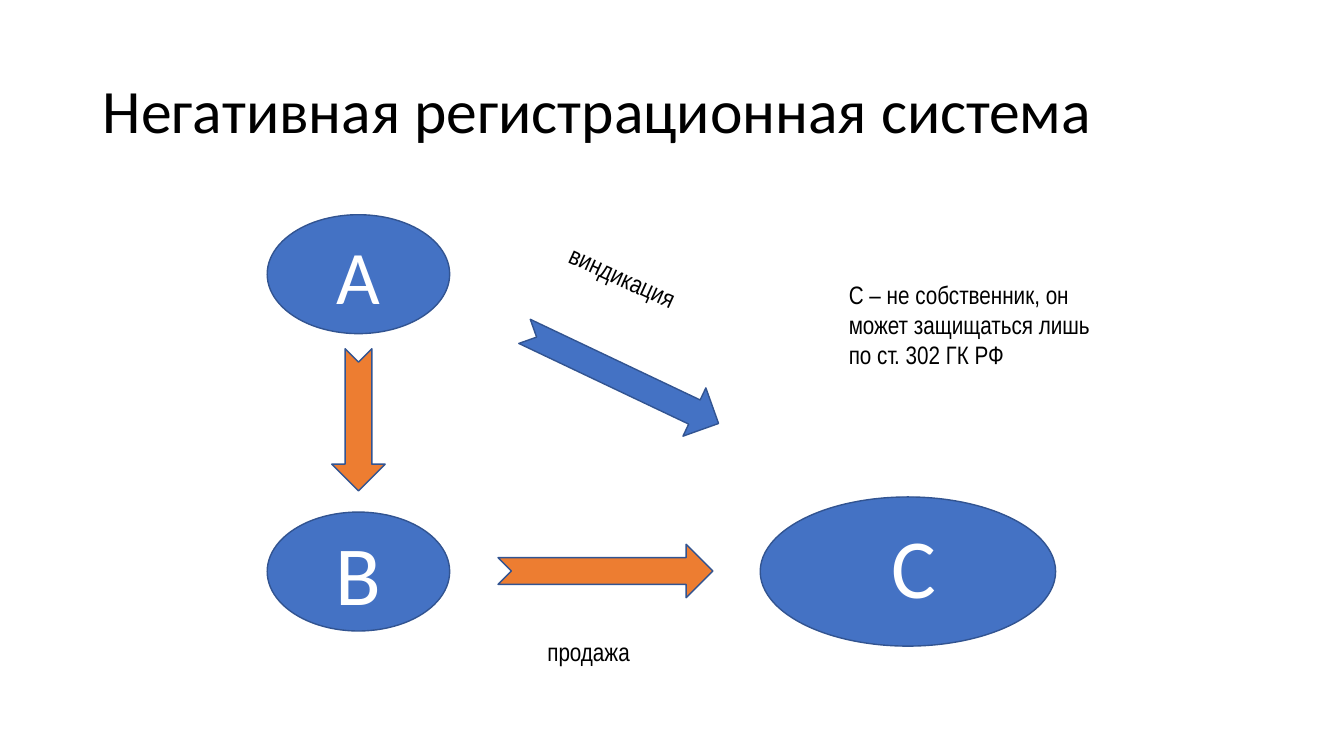
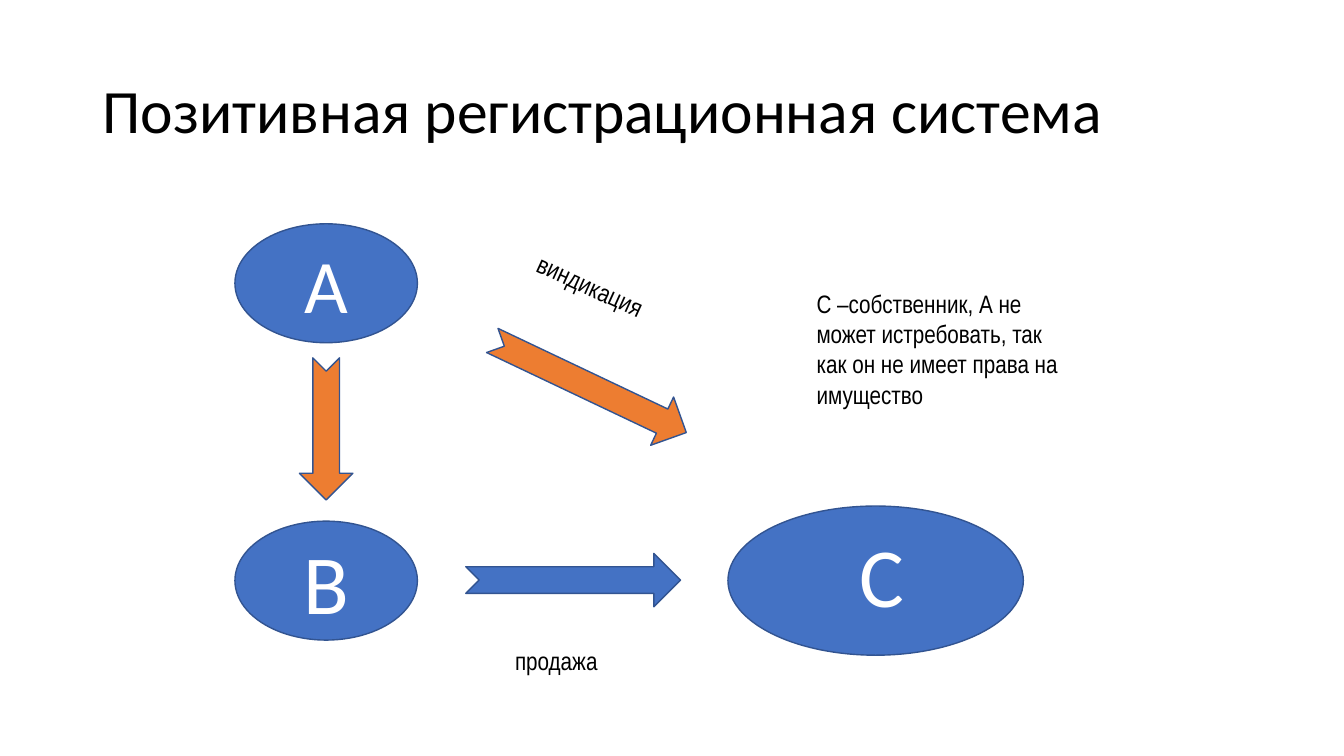
import pptx
import pptx.dml.color
import pptx.enum.shapes
import pptx.enum.text
import pptx.util

Inches = pptx.util.Inches
Pt = pptx.util.Pt

COLORS = {
    "background": "FFFFFF",
    "text": "000000",
    "letter": "FFFFFF",
    "blue": "4472C4",
    "orange": "ED7D31",
    "outline": "325491",
}
TITLE_FONT = "Calibri"
LABEL_FONT = "Arial Narrow"
TITLE_BOX = (0.92, 0.4, 11.5, 1.45)

# Diagram parts: left and top from the diagram's corner, width, height
OWNERS = [
    ("А", (0, 0, 1.81, 1.18), 54),
    ("В", (0, 2.95, 1.81, 1.18), 60),
    ("С", (4.89, 2.8, 2.93, 1.48), 60),
]
ARROWS = {
    "sale": ((2.29, 3.27, 2.13, 0.53), 0),
    "first sale": ((0.2, 1.77, 1.41, 0.53), 90),
    "vindication": ((2.45, 1.35, 2.13, 0.53), 25.4),
}
LABELS = [
    ("продажа", (2.68, 4.13, 1.35, 0.4), 0),
    ("виндикация", (2.8, 0.72, 2.78, 0.4), 24.6),
]
NOTE_BOX = (5.67, 0.59, 2.68, 1.01)

SYSTEMS = [
    {
        "title": "Негативная регистрационная система",
        "origin": (2.65, 2.13),
        "arrows": {"sale": "orange", "first sale": "orange", "vindication": "blue"},
        "note": "С – не собственник, он может защищаться лишь по ст. 302 ГК РФ",
    },
    {
        "title": "Позитивная регистрационная система",
        "origin": (2.33, 2.22),
        "arrows": {"sale": "blue", "first sale": "orange", "vindication": "orange"},
        "note": "С –собственник, А не может истребовать, так как он не имеет права на имущество",
    },
]


def rgb(name):
    return pptx.dml.color.RGBColor.from_string(COLORS[name])


def place(origin, box):
    """Turn a box relative to origin into slide lengths."""
    left, top, width, height = box
    return [Inches(value) for value in (origin[0] + left, origin[1] + top, width, height)]


def write(shape, text, font, size, color):
    frame = shape.text_frame
    frame.word_wrap = True
    paragraph = frame.paragraphs[0]
    paragraph.text = text
    paragraph.font.name = font
    paragraph.font.size = Pt(size)
    paragraph.font.color.rgb = rgb(color)
    return paragraph


def add_text(slide, position, text, font=LABEL_FONT, size=18):
    shape = slide.shapes.add_textbox(*position)
    return shape, write(shape, text, font, size, "text")


def add_figure(slide, kind, position, color):
    shape = slide.shapes.add_shape(kind, *position)
    shape.shadow.inherit = False
    shape.fill.solid()
    shape.fill.fore_color.rgb = rgb(color)
    shape.line.color.rgb = rgb("outline")
    shape.line.width = Pt(1)
    return shape


def add_title(slide, text):
    shape, paragraph = add_text(slide, place((0, 0), TITLE_BOX), text, TITLE_FONT, 44)
    shape.text_frame.vertical_anchor = pptx.enum.text.MSO_ANCHOR.MIDDLE
    paragraph.line_spacing = 0.9


def add_diagram(slide, origin, arrow_colors, note):
    kinds = pptx.enum.shapes.MSO_SHAPE

    # Owners
    for letter, box, size in OWNERS:
        ellipse = add_figure(slide, kinds.OVAL, place(origin, box), "blue")
        paragraph = write(ellipse, letter, TITLE_FONT, size, "letter")
        paragraph.alignment = pptx.enum.text.PP_ALIGN.CENTER
        ellipse.text_frame.vertical_anchor = pptx.enum.text.MSO_ANCHOR.MIDDLE
    # The last owner's letter sits slightly right and higher
    ellipse.text_frame.margin_left = Inches(0.22)
    paragraph.line_spacing = 0.9
    paragraph.space_before = Pt(10)

    # Arrows between owners
    for name, (box, angle) in ARROWS.items():
        arrow = add_figure(slide, kinds.NOTCHED_RIGHT_ARROW, place(origin, box), arrow_colors[name])
        arrow.rotation = angle

    # Arrow labels and the legal note
    for text, box, angle in LABELS + [(note, NOTE_BOX, 0)]:
        label, _ = add_text(slide, place(origin, box), text)
        label.rotation = angle


def add_system_slide(presentation, system):
    slide = presentation.slides.add_slide(presentation.slide_layouts[6])
    slide.background.fill.solid()
    slide.background.fill.fore_color.rgb = rgb("background")
    add_title(slide, system["title"])
    add_diagram(slide, system["origin"], system["arrows"], system["note"])


def main():
    presentation = pptx.Presentation()
    presentation.slide_width = Inches(13.33)
    presentation.slide_height = Inches(7.5)
    for system in SYSTEMS:
        add_system_slide(presentation, system)
    presentation.save("out.pptx")


if __name__ == "__main__":
    main()
